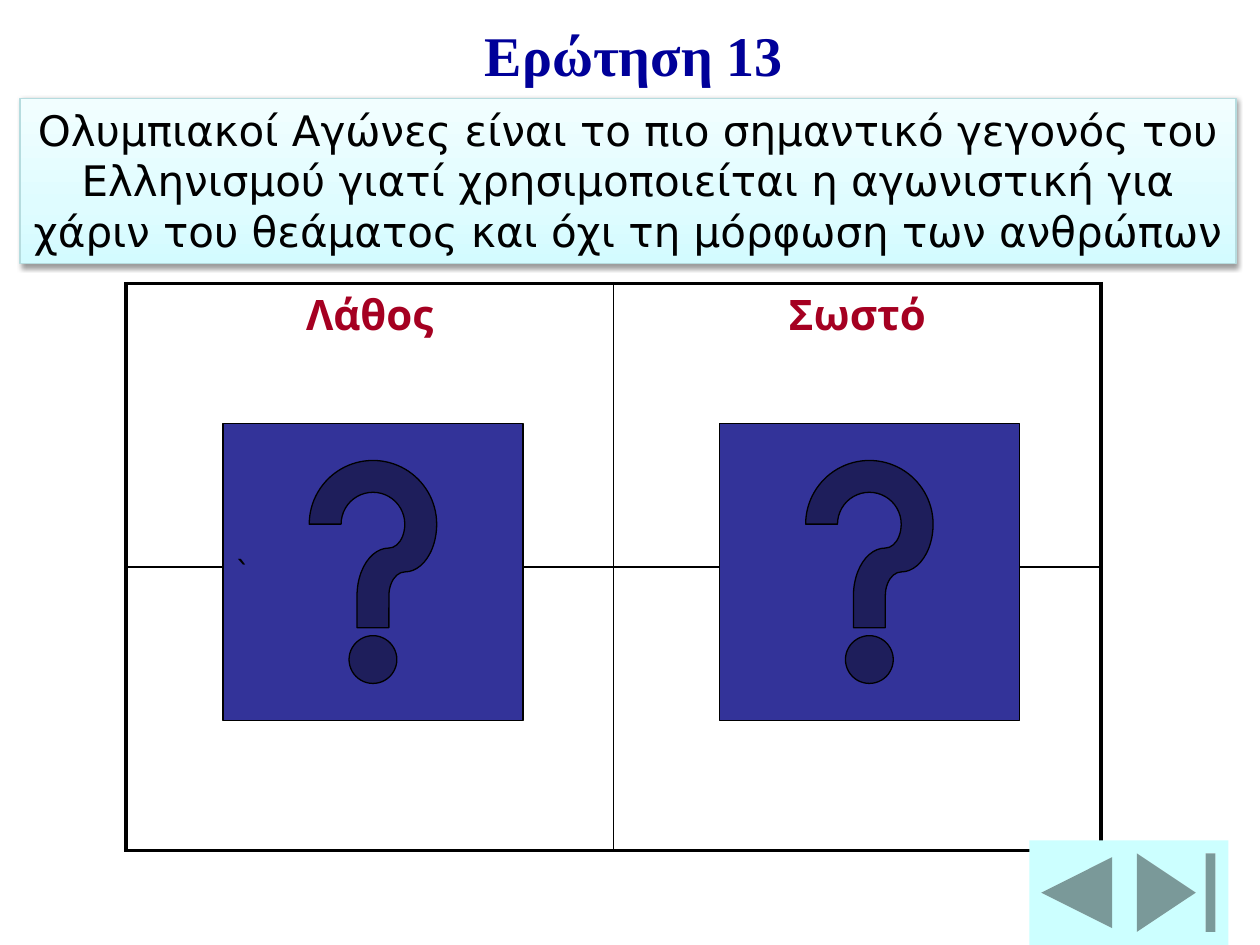
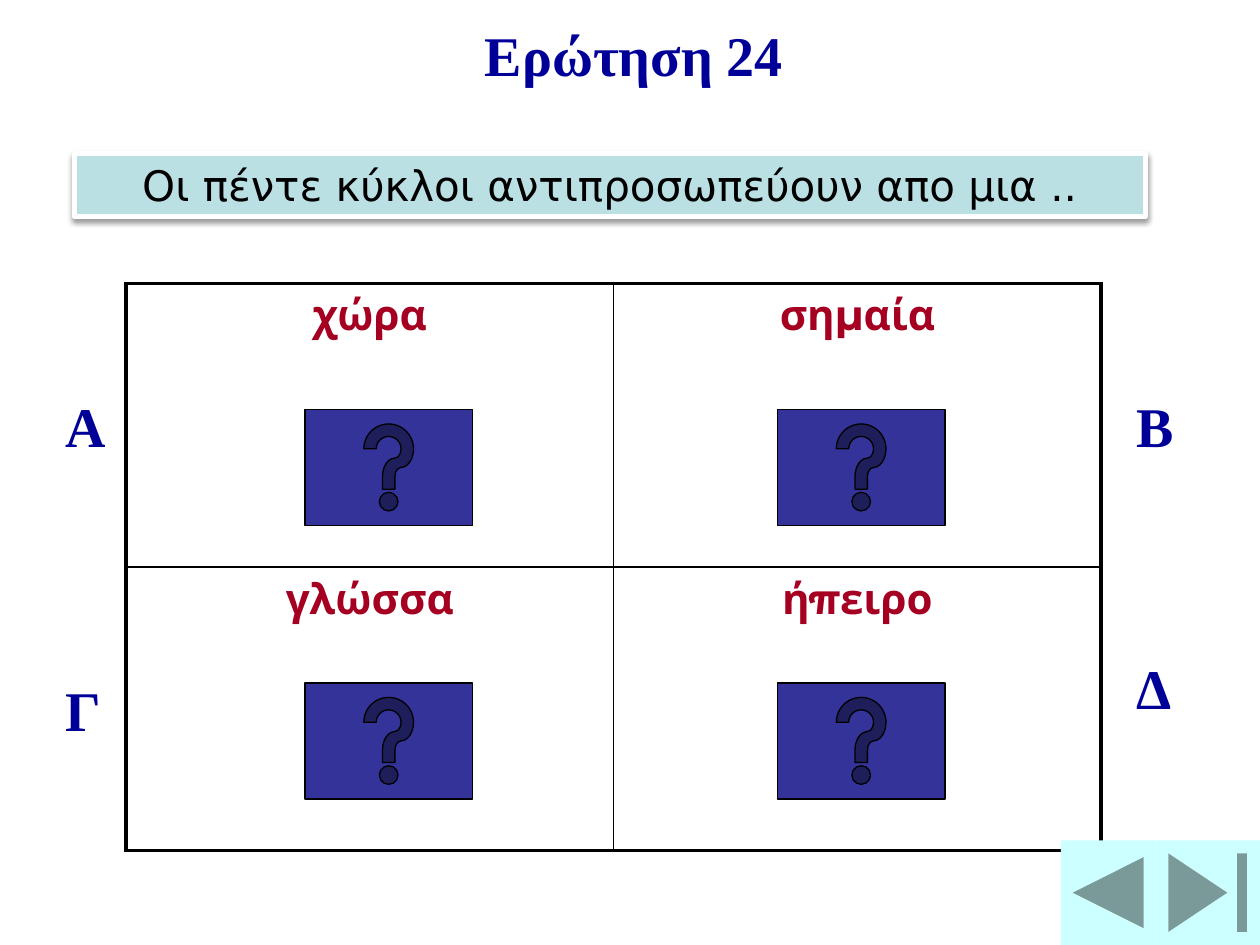
from copy import deepcopy
from dataclasses import dataclass
from itertools import product

from lxml.etree import SubElement
from pptx import Presentation
from pptx.dml.color import RGBColor
from pptx.enum.shapes import MSO_SHAPE as Preset
from pptx.enum.text import MSO_ANCHOR as Anchor, PP_ALIGN as Align
from pptx.oxml.ns import qn
from pptx.util import Emu, Pt

# Shared look: 100 px to the inch
EMU_PER_PX = 9144
BLACK, WHITE = "000000", "FFFFFF"
NAVY, CRIMSON = "000099", "A50021"
BUTTON_BLUE, NAVIGATION_CYAN, PROMPT_TEAL = "333399", "CCFFFF", "BBE0E3"
PROMPT_GRADIENT = ((0, "D3FBFF"), (0.35, "DFFCFF"), (1, "F2FEFF"))
THIN, THICK = 1, 2.25

HEADING = {"name": "Times New Roman", "size": Pt(32), "bold": True}
ANSWER = {"name": "Montserrat", "size": Pt(24), "bold": True}
PROMPT = {"name": "DejaVu Sans", "size": Pt(24)}
MARK = {"name": "DejaVu Sans", "size": Pt(18)}


@dataclass(frozen=True)
class Box:
    left: int
    top: int
    width: int
    height: int

    def emu(self) -> list[Emu]:
        return [px(n) for n in (self.left, self.top, self.width, self.height)]


@dataclass(frozen=True)
class ButtonGrid:
    first: Box
    step_x: int
    step_y: int
    rows: int

    def boxes(self) -> list[Box]:
        first = self.first
        return [Box(first.left + column * self.step_x, first.top + row * self.step_y,
                    first.width, first.height)
                for row, column in product(range(self.rows), range(2))]


@dataclass(frozen=True)
class Question:
    title: str
    prompt: str
    prompt_box: Box
    prompt_line: tuple[str, float]
    answers: tuple[tuple[str, str], ...]
    buttons: ButtonGrid
    navigation_left: int
    gradient: bool = False
    first_mark: str = ""
    letters: tuple[tuple[str, int, int], ...] = ()


QUESTIONS = (
    Question(
        title="Ερώτηση 13",
        prompt="Ολυμπιακοί Αγώνες είναι το πιο σημαντικό γεγονός του Ελληνισμού "
               "γιατί χρησιμοποιείται η αγωνιστική για χάριν του θεάματος και "
               "όχι τη μόρφωση των ανθρώπων",
        prompt_box=Box(16, 78, 965, 131),
        prompt_line=("B6DCDF", 0.75),
        answers=(("Λάθος", "Σωστό"), ("", "")),
        buttons=ButtonGrid(Box(177, 336, 238, 236), 394, 0, 1),
        navigation_left=817,
        gradient=True,
        first_mark="`",
    ),
    Question(
        title="Ερώτηση 24",
        prompt="Oι πέντε κύκλοι αντιπροσωπεύουν απο μια ..",
        prompt_box=Box(59, 122, 850, 50),
        prompt_line=(WHITE, 3),
        answers=(("χώρα", "σημαία"), ("γλώσσα", "ήπειρο")),
        buttons=ButtonGrid(Box(242, 325, 133, 92), 375, 217, 2),
        navigation_left=842,
        letters=(("Α", 42, 300), ("Β", 892, 300), ("Γ", 42, 525), ("Δ", 892, 508)),
    ),
)


def px(length: int) -> Emu:
    return Emu(length * EMU_PER_PX)


def color(value: str) -> RGBColor:
    return RGBColor.from_string(value)


def write(frame, text: str, font_values: dict, text_color: str, align=Align.LEFT) -> None:
    paragraph = frame.paragraphs[0]
    paragraph.alignment = align
    run = paragraph.add_run()
    run.text = text
    for name, value in font_values.items():
        setattr(run.font, name, value)
    run.font.color.rgb = color(text_color)


def add_heading(slide, text: str, box: Box) -> None:
    frame = slide.shapes.add_textbox(*box.emu()).text_frame
    frame.word_wrap = True
    frame.margin_top, frame.margin_bottom = px(11), 0
    write(frame, text, HEADING, NAVY)


def add_box(slide, preset, box: Box, fill: str, line: tuple[str, float] | None = None):
    shape = slide.shapes.add_shape(preset, *box.emu())
    shape.shadow.inherit = False
    shape.fill.solid()
    shape.fill.fore_color.rgb = color(fill)
    if line:
        shape.line.color.rgb = color(line[0])
        shape.line.width = Pt(line[1])
    else:
        shape.line.fill.background()
    return shape


def add_drop_shadow(shape) -> None:
    effects = shape._element.spPr.find(qn("a:effectLst"))
    shadow = SubElement(effects, qn("a:outerShdw"), blurRad=str(Pt(3.1)),
                        dist=str(Pt(1.6)), dir="5400000", rotWithShape="0")
    shade = SubElement(shadow, qn("a:srgbClr"), val=BLACK)
    SubElement(shade, qn("a:alpha"), val="38000")


def fill_gradient(shape) -> None:
    shape.fill.gradient()
    shape.fill.gradient_angle = 90
    stop_list = shape._element.spPr.find(qn("a:gradFill")).find(qn("a:gsLst"))
    stop_list.append(deepcopy(stop_list[0]))
    for stop, (position, value) in zip(shape.fill.gradient_stops, PROMPT_GRADIENT):
        stop.position = position
        stop.color.rgb = color(value)


def add_prompt(slide, question: Question) -> None:
    shape = add_box(slide, Preset.RECTANGLE, question.prompt_box, PROMPT_TEAL,
                    question.prompt_line)
    if question.gradient:
        fill_gradient(shape)
    add_drop_shadow(shape)
    frame = shape.text_frame
    frame.word_wrap = True
    frame.vertical_anchor = Anchor.TOP if question.gradient else Anchor.MIDDLE
    write(frame, question.prompt, PROMPT, BLACK, Align.CENTER)


def set_borders(cell, widths: dict[str, float]) -> None:
    properties = cell._tc.get_or_add_tcPr()
    for index, (side, width) in enumerate(widths.items()):
        line = SubElement(properties, qn(f"a:ln{side}"), w=str(Pt(width)))
        fill = SubElement(line, qn("a:solidFill"))
        SubElement(fill, qn("a:srgbClr"), val=BLACK)
        properties.insert(index, line)


def add_answers(slide, answers: tuple[tuple[str, str], ...]) -> None:
    table = slide.shapes.add_table(2, 2, *Box(100, 225, 774, 450).emu()).table
    table.first_row = table.horz_banding = False
    for row, column in product(range(2), range(2)):
        cell = table.cell(row, column)
        cell.fill.solid()
        cell.fill.fore_color.rgb = color(WHITE)
        set_borders(cell, {
            "L": THIN if column else THICK,
            "R": THICK if column else THIN,
            "T": THIN if row else THICK,
            "B": THICK if row else THIN,
        })
        if answers[row][column]:
            write(cell.text_frame, answers[row][column], ANSWER, CRIMSON, Align.CENTER)


def add_help_buttons(slide, question: Question) -> None:
    buttons = [add_box(slide, Preset.ACTION_BUTTON_HELP, box, BUTTON_BLUE, (BLACK, 0.75))
               for box in question.buttons.boxes()]
    if question.first_mark:
        frame = buttons[0].text_frame
        frame.word_wrap = False
        frame.vertical_anchor = Anchor.MIDDLE
        write(frame, question.first_mark, MARK, BLACK)


def add_navigation(slide, left: int) -> None:
    add_box(slide, Preset.ACTION_BUTTON_END, Box(left + 75, 667, 83, 83), NAVIGATION_CYAN)
    add_box(slide, Preset.ACTION_BUTTON_BACK_OR_PREVIOUS, Box(left, 667, 75, 83),
            NAVIGATION_CYAN)


def add_question(presentation, question: Question) -> None:
    slide = presentation.slides.add_slide(presentation.slide_layouts[6])
    add_answers(slide, question.answers)
    for letter, left, top in question.letters:
        add_heading(slide, letter, Box(left, top, 50, 63))
    add_heading(slide, question.title, Box(375, 5, 267, 64))
    add_help_buttons(slide, question)
    add_navigation(slide, question.navigation_left)
    add_prompt(slide, question)


def main() -> None:
    presentation = Presentation()
    presentation.slide_width, presentation.slide_height = px(1000), px(750)
    for question in QUESTIONS:
        add_question(presentation, question)
    presentation.save("out.pptx")


if __name__ == "__main__":
    main()
